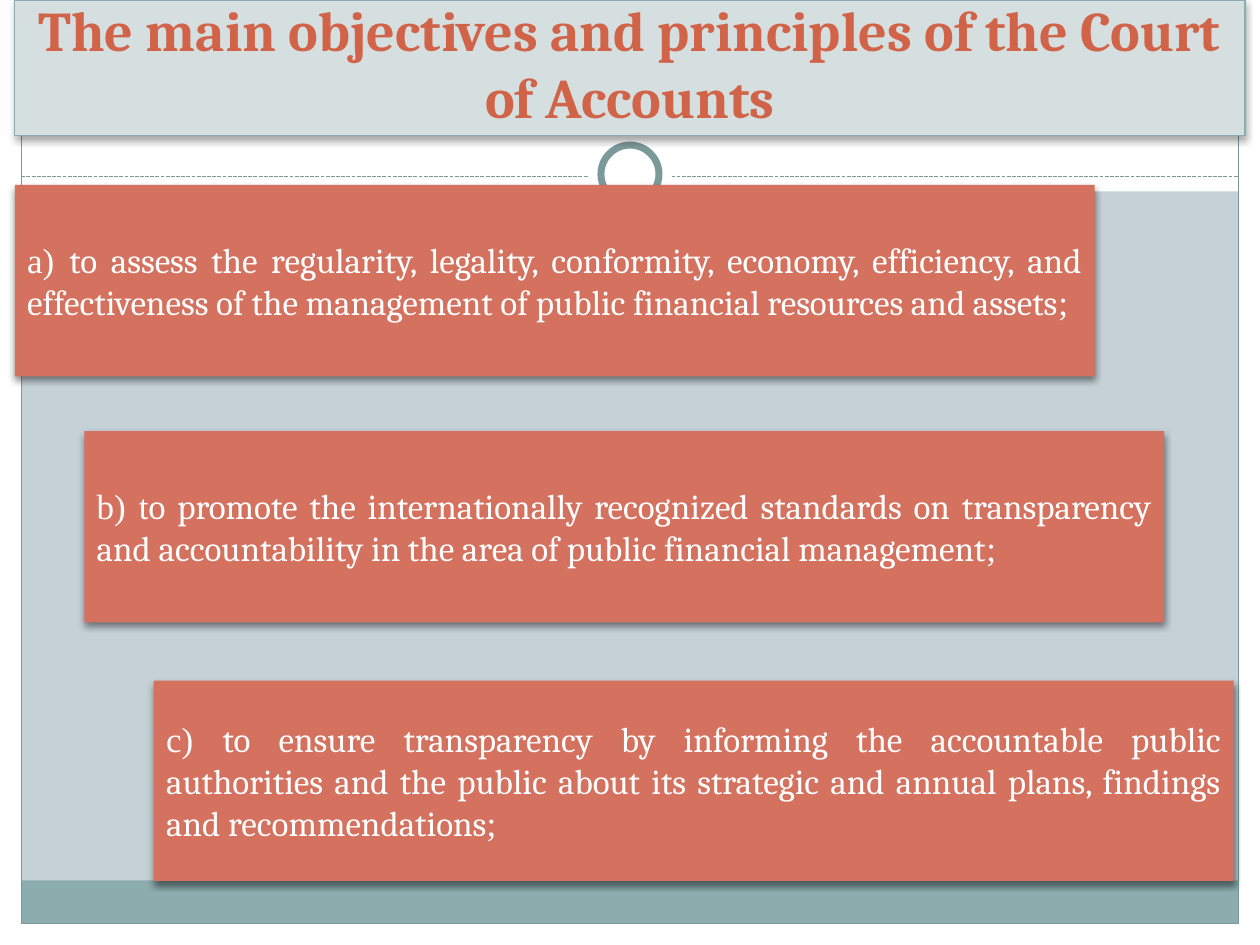
from lxml.etree import SubElement
from pptx import Presentation
from pptx.dml.color import RGBColor
from pptx.enum.dml import MSO_LINE
from pptx.enum.shapes import MSO_CONNECTOR, MSO_SHAPE
from pptx.enum.text import MSO_ANCHOR, PP_ALIGN
from pptx.oxml.ns import qn
from pptx.util import Cm, Pt

WIDTH, HEIGHT = 25.4, 19.05
EDGE = 0.43
WHITE, TEAL, SLATE, RUST = "FFFFFF", "8CADAE", "7C999A", "D4725F"
BODY, LABEL = "Cambria", "Times New Roman"

TITLE = "The main objectives and principles of the Court of Accounts"
OBJECTIVES = [
    ("a) ", "to assess the regularity, legality, conformity, economy, efficiency, and "
     "effectiveness of the management of public financial resources and assets", 3.73, 3.86),
    ("b) t", "o promote the internationally recognized standards on transparency and "
     "accountability in the area of public financial management", 8.69, 3.86),
    ("c) ", "to ensure transparency by informing the accountable public authorities and "
     "the public about its strategic and annual plans, findings and recommendations", 13.72, 4.04),
]
CARD_LEFT, CARD_STEP, CARD_WIDTH = 0.3, 1.4, 21.77

MARGINS = [
    (0, HEIGHT - EDGE, WIDTH, EDGE),
    (0, 0, WIDTH, 3.86),
    (0, 0, EDGE, HEIGHT),
    (WIDTH - EDGE, 0, EDGE, HEIGHT),
]
RING_X, RING_Y = WIDTH / 2, 3.51
TITLE_FONT = dict(name=BODY, size=Pt(32), bold=True)


def rgb(value):
    return RGBColor.from_string(value)


def add_shape(slide, box, fill=None, line=None, weight=0.75, kind=MSO_SHAPE.RECTANGLE):
    sp = slide.shapes.add_shape(kind, *map(Cm, box))
    sp.shadow.inherit = False
    if fill:
        sp.fill.solid()
        sp.fill.fore_color.rgb = rgb(fill)
    else:
        sp.fill.background()
    if line:
        sp.line.color.rgb = rgb(line)
        sp.line.width = Pt(weight)
    else:
        sp.line.fill.background()
    return sp


def add_shadow(sp, opacity):
    effects = sp._element.spPr.find(qn("a:effectLst"))
    shadow = SubElement(effects, qn("a:outerShdw"), blurRad=str(Pt(4)), dist=str(Pt(2)),
                        dir="5400000", rotWithShape="0")
    color = SubElement(shadow, qn("a:srgbClr"), val="000000")
    SubElement(color, qn("a:alpha"), val=str(opacity * 1000))


def write(sp, runs, color, align, anchor):
    tf = sp.text_frame
    tf.word_wrap = True
    tf.vertical_anchor = anchor
    p = tf.paragraphs[0]
    p.alignment = align
    for text, font in runs:
        r = p.add_run()
        r.text = text
        r.font.color.rgb = rgb(color)
        for key, value in font.items():
            setattr(r.font, key, value)


def add_circle(slide, size, **style):
    box = (RING_X - size / 2, RING_Y - size / 2, size, size)
    add_shape(slide, box, WHITE, kind=MSO_SHAPE.OVAL, **style)


def add_frame(slide):
    for box in MARGINS:
        add_shape(slide, box, WHITE)
    inner = WIDTH - 2 * EDGE
    add_shape(slide, (EDGE, 17.75, inner, 0.87), TEAL)
    add_shape(slide, (EDGE, EDGE, inner, HEIGHT - 2 * EDGE), line=SLATE)
    rule = slide.shapes.add_connector(MSO_CONNECTOR.STRAIGHT, Cm(EDGE), Cm(3.56),
                                      Cm(WIDTH - EDGE), Cm(3.56))
    rule.line.color.rgb = rgb(SLATE)
    rule.line.width = Pt(0.75)
    rule.line.dash_style = MSO_LINE.SQUARE_DOT
    SubElement(rule._element.spPr, qn("a:effectLst"))
    add_circle(slide, 1.7)
    add_circle(slide, 1.17, line=SLATE, weight=4)


def main():
    prs = Presentation()
    prs.slide_width, prs.slide_height = Cm(WIDTH), Cm(HEIGHT)
    slide = prs.slides.add_slide(prs.slide_layouts[6])
    slide.background.fill.solid()
    slide.background.fill.fore_color.rgb = rgb("C5D1D7")
    add_frame(slide)

    title = add_shape(slide, (0.3, 0, 24.8, 2.74), "D5DFDF", TEAL)
    add_shadow(title, 35)
    write(title, [(TITLE, TITLE_FONT)], "D16349", PP_ALIGN.CENTER, MSO_ANCHOR.BOTTOM)

    label, body = (dict(name=name, size=Pt(20)) for name in (LABEL, BODY))
    for i, (start, text, top, height) in enumerate(OBJECTIVES):
        card = add_shape(slide, (CARD_LEFT + i * CARD_STEP, top, CARD_WIDTH, height), RUST)
        add_shadow(card, 45)
        runs = [(start, label), (text, body), (";", label)]
        write(card, runs, WHITE, PP_ALIGN.JUSTIFY, MSO_ANCHOR.MIDDLE)

    prs.save("out.pptx")


if __name__ == "__main__":
    main()
